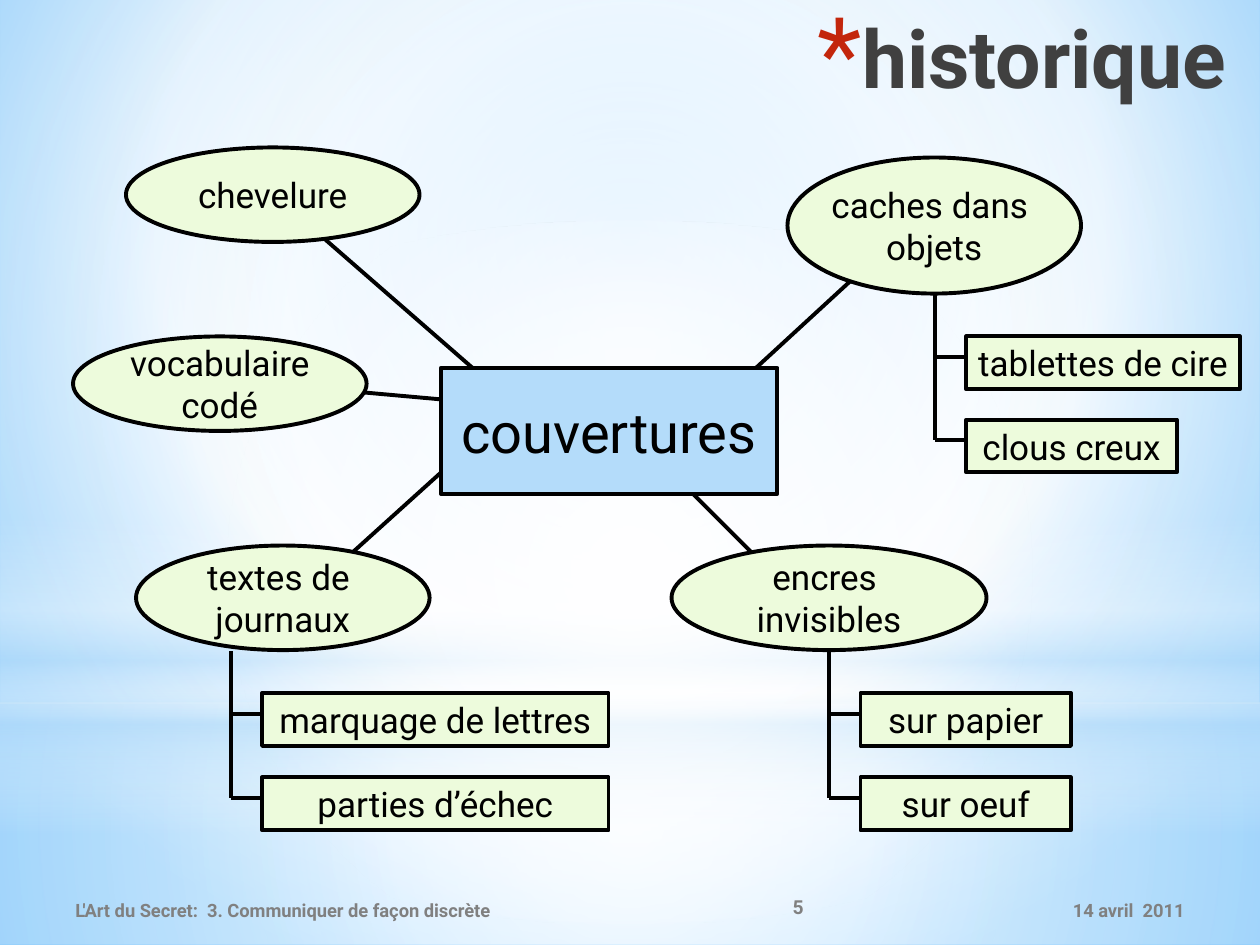
from typing import NamedTuple

from lxml import etree
from pptx import Presentation
from pptx import util as u
from pptx.dml.color import RGBColor
from pptx.enum import shapes, text
from pptx.oxml import ns

FONT = "Roboto"
BLACK, GREY, BLUE, GREEN, WHITE = "000000", "808080", "B4DCFA", "EDFBDC", "FFFFFF"
RECT, OVAL = shapes.MSO_SHAPE.RECTANGLE, shapes.MSO_SHAPE.OVAL
LEFT, CENTER, RIGHT = text.PP_ALIGN.LEFT, text.PP_ALIGN.CENTER, text.PP_ALIGN.RIGHT
DROPS = (0.5, 1.16)  # heights of the two branches below the top of a trunk


class Stop(NamedTuple):
    position: int
    color: str
    alpha: int = 100


class Backdrop(NamedTuple):
    kind: int
    top: float
    height: float
    stops: tuple
    focus: tuple | None = (50, 50, 50, 50)  # None: vertical linear gradient


class Node(NamedTuple):
    label: str
    at: tuple
    link: tuple  # from x, y to x, y


class Leaf(NamedTuple):
    label: str
    left: float
    top: float
    width: float


class Footer(NamedTuple):
    label: str
    at: tuple
    size: float
    align: int


BACKDROPS = [
    Backdrop(RECT, 5.58, 1.92, (Stop(0, WHITE, 91), Stop(37, WHITE, 76), Stop(100, BLUE, 79))),
    Backdrop(RECT, 0, 5.58, (Stop(0, WHITE, 89), Stop(48, WHITE, 62), Stop(100, BLUE, 79))),
    Backdrop(RECT, 4.12, 2.5, (Stop(0, WHITE, 0), Stop(29, WHITE, 30), Stop(45, BLUE, 40),
                               Stop(55, WHITE, 26), Stop(65, BLUE, 60), Stop(100, WHITE, 0)), None),
    Backdrop(OVAL, 1.75, 5.58, (Stop(0, WHITE), Stop(56, WHITE, 0))),
]
NODES = [
    Node("encres \ninvisibles", (5.33, 4.33, 2.5, 0.83), (5.5, 3.92, 6, 4.42)),
    Node("chevelure", (1, 1.17, 2.33, 0.75), (3.75, 2.92, 2.5, 1.83)),
    Node("vocabulaire\ncodé", (0.58, 2.67, 2.33, 0.75), (3.5, 3.17, 2.5, 3.08)),
    Node("caches dans \nobjets", (6.25, 1.25, 2.33, 1.08), (6, 2.92, 7, 2)),
    Node("textes de \njournaux", (1.08, 4.33, 2.33, 0.83), (3.5, 3.75, 2.67, 4.5)),
]
TRUNKS = [(1.83, 5.17), (6.58, 5.17), (7.42, 2.33)]
LEAVES = [
    Leaf("sur papier", 6.83, 5.5, 1.67),
    Leaf("sur oeuf", 6.83, 6.17, 1.67),
    Leaf("marquage de lettres", 2.08, 5.5, 2.75),
    Leaf("parties d’échec", 2.08, 6.17, 2.75),
    Leaf("tablettes de cire", 7.67, 2.67, 2.17),
    Leaf("clous creux", 7.67, 3.33, 1.67),
]
FOOTERS = [
    Footer("14 avril  2011", (6.75, 7.02, 2.75, 0.4), 10.5, RIGHT),
    Footer("L'Art du Secret:  3. Communiquer de façon discrète", (0.5, 7.02, 5.42, 0.4), 10.5, LEFT),
    Footer("5", (5.92, 7, 0.83, 0.4), 11, CENTER),
]


def rgb(color: str) -> RGBColor:
    return RGBColor.from_string(color)


def inches(*values: float) -> list:
    return [u.Inches(value) for value in values]


def add_element(parent, tag: str, **attributes):
    names = {name: str(value) for name, value in attributes.items()}
    return etree.SubElement(parent, ns.qn(tag), names)


def set_gradient(parent, stops: tuple, focus: tuple | None) -> None:
    """Replace the solid fill in parent by a gradient."""
    gradient = etree.Element(ns.qn("a:gradFill"), {"rotWithShape": "1"})
    stop_list = add_element(gradient, "a:gsLst")
    for stop in stops:
        entry = add_element(stop_list, "a:gs", pos=stop.position * 1000)
        color = add_element(entry, "a:srgbClr", val=stop.color)
        if stop.alpha < 100:
            add_element(color, "a:alpha", val=stop.alpha * 1000)
    if focus is None:
        add_element(gradient, "a:lin", ang=90 * 60000, scaled=0)
    else:
        circle = add_element(gradient, "a:path", path="circle")
        sides = {side: value * 1000 for side, value in zip("ltrb", focus)}
        add_element(circle, "a:fillToRect", **sides)
    parent.replace(parent.find(ns.qn("a:solidFill")), gradient)


def add_backdrop(page, backdrop: Backdrop) -> None:
    shape = page.shapes.add_shape(backdrop.kind, *inches(0, backdrop.top, 10, backdrop.height))
    shape.shadow.inherit = False
    shape.line.fill.background()
    shape.fill.solid()
    set_gradient(shape.element.spPr, backdrop.stops, backdrop.focus)


def write(shape, label: str, size: float, color: str, align: int, bold: bool = False) -> None:
    shape.text_frame.text = label
    for para in shape.text_frame.paragraphs:
        para.alignment = align
        for span in para.runs:
            span.font.name, span.font.size, span.font.bold = FONT, u.Pt(size), bold
            span.font.color.rgb = rgb(color)


def add_box(page, kind: int, label: str, at: tuple, fill: str = GREEN, size: float = 20) -> None:
    box = page.shapes.add_shape(kind, *inches(*at))
    box.shadow.inherit = False
    box.fill.solid()
    box.fill.fore_color.rgb = rgb(fill)
    box.line.color.rgb = rgb(BLACK)
    box.line.width = u.Pt(2.25)
    write(box, label, size, BLACK, CENTER)
    box.text_frame.word_wrap = False
    box.text_frame.vertical_anchor = text.MSO_ANCHOR.MIDDLE


def add_line(page, *ends: float) -> None:
    line = page.shapes.add_connector(shapes.MSO_CONNECTOR.STRAIGHT, *inches(*ends))
    line.line.color.rgb = rgb(BLACK)
    line.line.width = u.Pt(2.25)
    add_element(line.element.spPr, "a:effectLst")


def add_trunk(page, x: float, top: float) -> None:
    add_line(page, x, top, x, top + DROPS[-1])
    for drop in DROPS:
        add_line(page, x, top + drop, x + 0.25, top + drop)


def add_footer(page, footer: Footer) -> None:
    box = page.shapes.add_textbox(*inches(*footer.at))
    write(box, footer.label, footer.size, GREY, footer.align, True)
    box.text_frame.word_wrap = True
    box.text_frame.vertical_anchor = text.MSO_ANCHOR.MIDDLE


def place_title(page, label: str) -> None:
    title = page.shapes.title
    title.left, title.top, title.width, title.height = inches(0, 0.01, 9.83, 1.25)
    write(title, label, 46, "404040", RIGHT, True)
    title.text_frame.vertical_anchor = text.MSO_ANCHOR.TOP
    properties = title.text_frame.paragraphs[0]._p.get_or_add_pPr()
    properties.set("marL", str(u.Inches(0.35)))
    properties.set("indent", str(u.Inches(-0.35)))
    add_element(add_element(properties, "a:buClr"), "a:srgbClr", val="C3260C")
    add_element(properties, "a:buSzPct", val=128000)
    add_element(properties, "a:buFont", typeface=FONT)
    add_element(properties, "a:buChar", char="*")
    page.shapes.element.append(title.element)  # bring in front of the backdrops


def main() -> None:
    deck = Presentation()
    deck.slide_width, deck.slide_height = inches(10, 7.5)
    page = deck.slides.add_slide(deck.slide_layouts[5])
    page.background.fill.solid()
    set_gradient(page.element.xpath("p:cSld/p:bg/p:bgPr")[0],
                 (Stop(0, "9ED5FF"), Stop(60, WHITE), Stop(100, "5BB9FF")), (20, 10, 20, 60))
    for backdrop in BACKDROPS:
        add_backdrop(page, backdrop)
    place_title(page, "historique")
    for x, top in TRUNKS:
        add_trunk(page, x, top)
    add_box(page, RECT, "couvertures", (3.5, 2.92, 2.67, 1), BLUE, 32)
    for node in NODES:
        add_line(page, *node.link)
        add_box(page, OVAL, node.label, node.at)
    for leaf in LEAVES:
        add_box(page, RECT, leaf.label, (leaf.left, leaf.top, leaf.width, 0.42))
    for footer in FOOTERS:
        add_footer(page, footer)
    deck.save("out.pptx")


if __name__ == "__main__":
    main()
